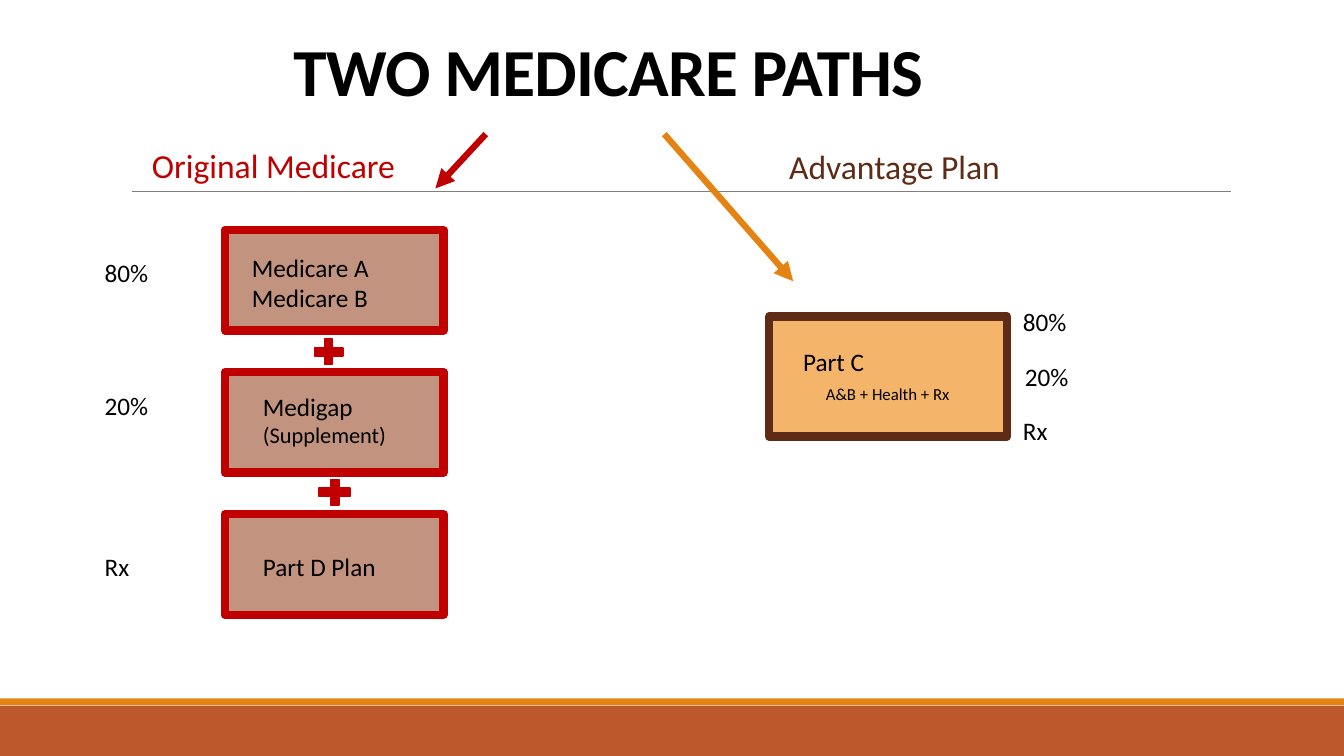
from lxml.etree import SubElement
from pptx import Presentation
from pptx.dml.color import RGBColor
from pptx.enum.shapes import MSO_CONNECTOR, MSO_SHAPE
from pptx.enum.text import MSO_ANCHOR, MSO_AUTO_SIZE, PP_ALIGN
from pptx.oxml.ns import qn
from pptx.util import Pt

# Content
TITLE = "TWO MEDICARE PATHS"
BLACK, RED, BROWN, ORANGE = "000000", "C00000", "5E2C16", "E48312"
TAN, PEACH, RUST, GRAY = "C2947F", "F4B469", "BD582C", "7F7F7F"

# Heading: text, colour, left, top, width
HEADINGS = [("Original Medicare", RED, 101.5, 100.1, 232.6),
            ("Advantage Plan", BROWN, 556.6, 100.8, 205.9)]
# Box text: left, top, width, lines of (text, size, indent, space before)
BOX_TEXTS = [
    (172.8, 176.4, 125, [("Medicare A", 18, 0, 0), ("Medicare B", 18, 0, 0)]),
    (180.7, 275.8, 135.4, [("Medigap", 18, 0, 0), ("(Supplement)", 16, 0, 0)]),
    (180.7, 390.2, 135.4, [("Part D Plan", 18, 0, 0)]),
    (566.6, 244.1, 135.4, [("Part C", 18, 0, 0),
                           ("A&B + Health + Rx", 12, 16.2, 4.5)]),
]
# Share: text, (left, top) beside Original Medicare, (left, top) beside Part C
SHARES = [("80%", (67.7, 180), (723.6, 215.3)),
          ("20%", (67.7, 275), (725, 254.2)),
          ("Rx", (67.7, 390.2), (723.6, 293))]
PLUSES = [(221, 239, 27.4, 24.5), (223.9, 339.1, 30.2, 25.2)]
ARROWS = [((474.5, 95.8), (566.6, 200.9), ORANGE),
          ((347, 95.8), (311, 134.6), RED)]
BOX_LEFT, BOX_TOP, BOX_W, BOX_H, BOX_STEP = 160.6, 164.2, 156.2, 72, 101.5


def color(hex_value):
    return RGBColor.from_string(hex_value)


def add_box(kind, x, y, w, h, fill, line=None, weight=0):
    sp = s.shapes.add_shape(kind, Pt(x), Pt(y), Pt(w), Pt(h))
    sp.shadow.inherit = False
    sp.fill.solid()
    sp.fill.fore_color.rgb = color(fill)
    if line:
        sp.line.color.rgb = color(line)
        sp.line.width = Pt(weight)
        SubElement(sp.line._get_or_add_ln(), qn("a:round"))
    else:
        sp.line.fill.background()
    return sp


def add_line(start, end, hex_value, weight, arrow=False):
    sp = s.shapes.add_connector(MSO_CONNECTOR.STRAIGHT, Pt(start[0]),
                                Pt(start[1]), Pt(end[0]), Pt(end[1]))
    sp.line.color.rgb = color(hex_value)
    sp.line.width = Pt(weight)
    if arrow:
        SubElement(sp.line._get_or_add_ln(), qn("a:tailEnd"), type="triangle")
    SubElement(sp._element.spPr, qn("a:effectLst"))


def add_run(p, text, size, hex_value, bold=False):
    r = p.add_run()
    r.text = text
    r.font.name = "Calibri"
    r.font.size = Pt(size)
    r.font.bold = bold
    r.font.color.rgb = color(hex_value)
    return r


def add_text(x, y, w, lines, hex_value=BLACK):
    h = 7.2 + sum(1.2 * size + before for _, size, _, before in lines)
    tf = s.shapes.add_textbox(Pt(x), Pt(y), Pt(w), Pt(h)).text_frame
    tf.word_wrap = True
    tf.auto_size = MSO_AUTO_SIZE.SHAPE_TO_FIT_TEXT
    for i, (text, size, indent, before) in enumerate(lines):
        p = tf.add_paragraph() if i else tf.paragraphs[0]
        p.space_before = Pt(before)
        if indent:
            p._p.get_or_add_pPr().set("marL", str(Pt(indent)))
        add_run(p, text, size, hex_value)


prs = Presentation()
prs.slide_width, prs.slide_height = Pt(960), Pt(540)
s = prs.slides.add_slide(prs.slide_layouts[5])

# Footer bands and rule
add_box(MSO_SHAPE.RECTANGLE, 0, 504, 960, 36, RUST)
add_box(MSO_SHAPE.RECTANGLE, 0, 498.8, 960, 5, ORANGE)
add_line((94.3, 136.8), (879.1, 136.8), GRAY, 0.75)

# Title
title = s.shapes.title
title.left, title.top, title.width, title.height = map(Pt, (202.3, 21.6, 499.7, 60.5))
tf = title.text_frame
tf.auto_size = MSO_AUTO_SIZE.NONE
tf.vertical_anchor = MSO_ANCHOR.BOTTOM
p = tf.paragraphs[0]
p.alignment = PP_ALIGN.LEFT
p.line_spacing = 0.85
r = add_run(p, TITLE, 48, BLACK, bold=True)
r.font._element.set("spc", "-50")

# Plan boxes
for i in range(3):
    add_box(MSO_SHAPE.RECTANGLE, BOX_LEFT, BOX_TOP + i * BOX_STEP,
            BOX_W, BOX_H, TAN, RED, 6)
add_box(MSO_SHAPE.RECTANGLE, 549.4, 226.1, 169.9, 85.7, PEACH, BROWN, 6)

# Arrows from the title and plus signs between boxes
for start, end, hex_value in ARROWS:
    add_line(start, end, hex_value, 4.5, arrow=True)
for place in PLUSES:
    add_box(MSO_SHAPE.MATH_PLUS, *place, RED, RED, 1.25).adjustments[0] = 0.235

# Headings, box texts and shares
for text, hex_value, x, y, w in HEADINGS:
    add_text(x, y, w, [(text, 24, 0, 0)], hex_value)
for place in BOX_TEXTS:
    add_text(*place)
for text, *places in SHARES:
    for x, y in places:
        add_text(x, y, 60, [(text, 18, 0, 0)])

prs.save("out.pptx")
